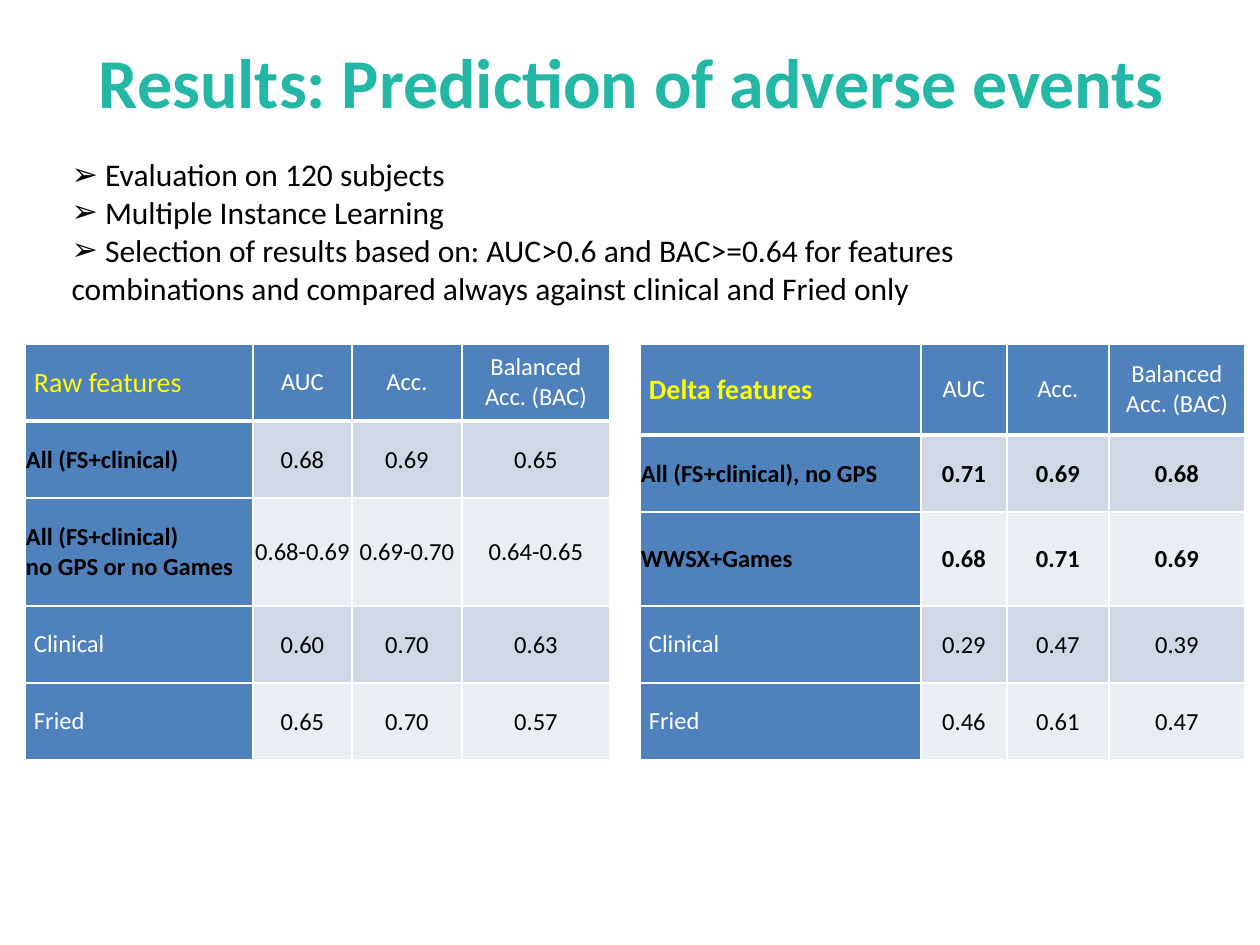
import pptx
import pptx.dml.color
import pptx.enum.text
import pptx.util
from lxml import etree
from pptx.oxml.ns import qn

PX = 914400 // 126
FONT = "Calibri"
COLORS = {
    "title": "23B7A5",
    "text": "000000",
    "white": "FFFFFF",
    "heading": "FFFF00",
    "header": "4F81BD",
    "band_dark": "D0D8E8",
    "band_light": "E9EDF4",
}
ALIGN = pptx.enum.text.PP_ALIGN
ANCHOR = pptx.enum.text.MSO_ANCHOR

BULLETS = [
    " Evaluation on 120 subjects",
    " Multiple Instance Learning",
    " Selection of results based on: AUC>0.6 and BAC>=0.64 for features "
    "combinations and compared always against clinical and Fried only",
]
METRICS = ["AUC", "Acc.", "Balanced Acc. (BAC)"]
RAW = [
    ["Raw features"] + METRICS,
    ["All (FS+clinical)", "0.68", "0.69", "0.65"],
    ["All (FS+clinical)\nno GPS or no Games", "0.68-0.69", "0.69-0.70", "0.64-0.65"],
    ["Clinical", "0.60", "0.70", "0.63"],
    ["Fried", "0.65", "0.70", "0.57"],
]
DELTA = [
    ["Delta features"] + METRICS,
    ["All (FS+clinical), no GPS", "0.71", "0.69", "0.68"],
    ["WWSX+Games", "0.68", "0.71", "0.69"],
    ["Clinical", "0.29", "0.47", "0.39"],
    ["Fried", "0.46", "0.61", "0.47"],
]


def rgb(name):
    return pptx.dml.color.RGBColor.from_string(COLORS[name])


def place(shape, box):
    shape.left, shape.top, shape.width, shape.height = (v * PX for v in box)


def format_runs(p, size, color, bold=False):
    for r in p.runs:
        r.font.name = FONT
        r.font.size = pptx.util.Pt(size)
        r.font.bold = bold
        r.font.color.rgb = rgb(color)


def add_title(s, box):
    title = s.shapes.title
    place(title, box)
    tf = title.text_frame
    tf.text = "Results: Prediction of adverse events"
    tf.vertical_anchor = ANCHOR.MIDDLE
    p = tf.paragraphs[0]
    p.alignment = ALIGN.CENTER
    format_runs(p, 40, "title", bold=True)


def add_bullets(s, box):
    body = s.placeholders[1]
    place(body, box)
    tf = body.text_frame
    tf.text = "\n".join(BULLETS)
    tf.word_wrap = True
    tf.auto_size = pptx.enum.text.MSO_AUTO_SIZE.SHAPE_TO_FIT_TEXT
    for p in tf.paragraphs:
        pPr = p._p.get_or_add_pPr()
        pPr.set("marL", "0")
        pPr.set("indent", "0")
        etree.SubElement(pPr, qn("a:buChar"), char="➢")
        p.space_before = pptx.util.Pt(0)
        format_runs(p, 18, "text")


def set_borders(cell, bottom):
    tcPr = cell._tc.get_or_add_tcPr()
    for side, points in (("L", 1), ("R", 1), ("T", 1), ("B", bottom)):
        ln = etree.SubElement(tcPr, qn("a:ln" + side), w=str(pptx.util.Pt(points)))
        fill = etree.SubElement(ln, qn("a:solidFill"))
        etree.SubElement(fill, qn("a:srgbClr"), val=COLORS["white"])


def fill_cell(cell, text, row, col, bold):
    is_header = row == 0
    is_baseline = row >= 3 and col == 0
    is_corner = is_header and col == 0
    set_borders(cell, 3 if is_header else 1)

    # Blue header row and label column, banded values
    band = "band_dark" if row % 2 else "band_light"
    cell.fill.solid()
    cell.fill.fore_color.rgb = rgb("header" if is_header or col == 0 else band)

    padded = is_header or is_baseline
    cell.margin_left = cell.margin_right = (9 if padded else 1) * PX
    cell.margin_top = (0 if padded else 1) * PX
    cell.margin_bottom = 0
    cell.vertical_anchor = ANCHOR.MIDDLE

    color = "heading" if is_corner else "white" if padded else "text"
    cell.text_frame.text = text
    for p in cell.text_frame.paragraphs:
        p.alignment = ALIGN.CENTER if col else ALIGN.LEFT
        if padded:
            p.space_after = pptx.util.Pt(6)
        format_runs(p, 16 if is_corner else 14, color, bold)


def add_results(s, left, top, widths, heights, rows, emphasis):
    """Result table; emphasis makes its heading and combination values bold."""
    frame = s.shapes.add_table(len(heights), len(widths), left * PX, top * PX,
                               sum(widths) * PX, sum(heights) * PX)
    table = frame.table
    table.first_row = table.horz_banding = False
    for column, width in zip(table.columns, widths):
        column.width = width * PX
    for i, (height, texts) in enumerate(zip(heights, rows)):
        table.rows[i].height = height * PX
        for j, text in enumerate(texts):
            if i == 0:
                bold = emphasis and j == 0
            else:
                bold = i < 3 and (emphasis or j == 0)
            fill_cell(table.cell(i, j), text, i, j, bold)


def main():
    prs = pptx.Presentation()
    prs.slide_width = pptx.util.Inches(10)
    prs.slide_height = pptx.util.Inches(7.5)
    s = prs.slides.add_slide(prs.slide_layouts[1])

    add_title(s, (40, 24, 1183, 113))
    add_bullets(s, (59, 149, 1050, 165))

    # Side-by-side results
    add_results(s, 25, 344, [228, 99, 110, 148], [77, 77, 108, 77, 77], RAW, False)
    add_results(s, 640, 344, [281, 86, 102, 136], [91, 77, 94, 77, 77], DELTA, True)

    prs.save("out.pptx")


if __name__ == "__main__":
    main()
